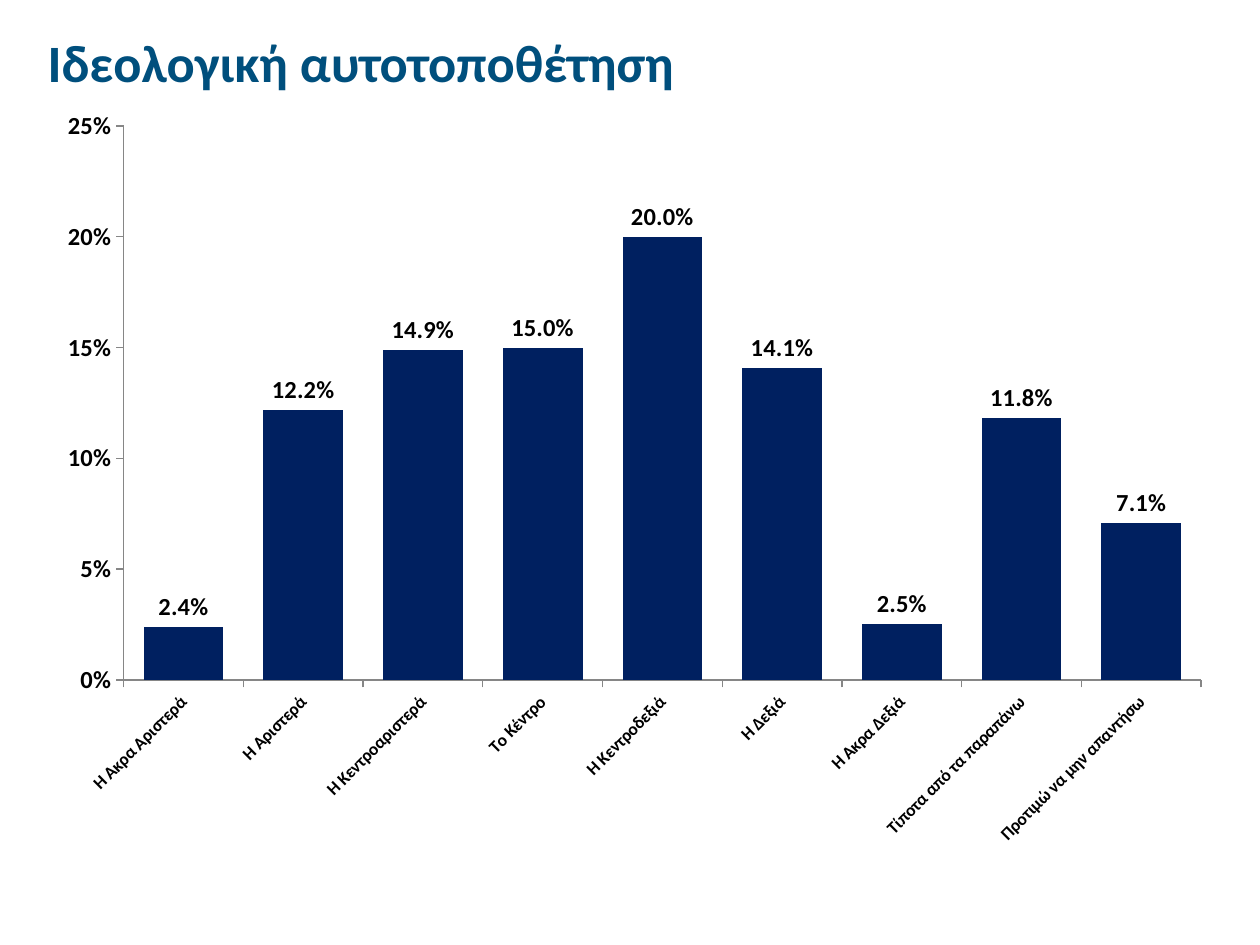
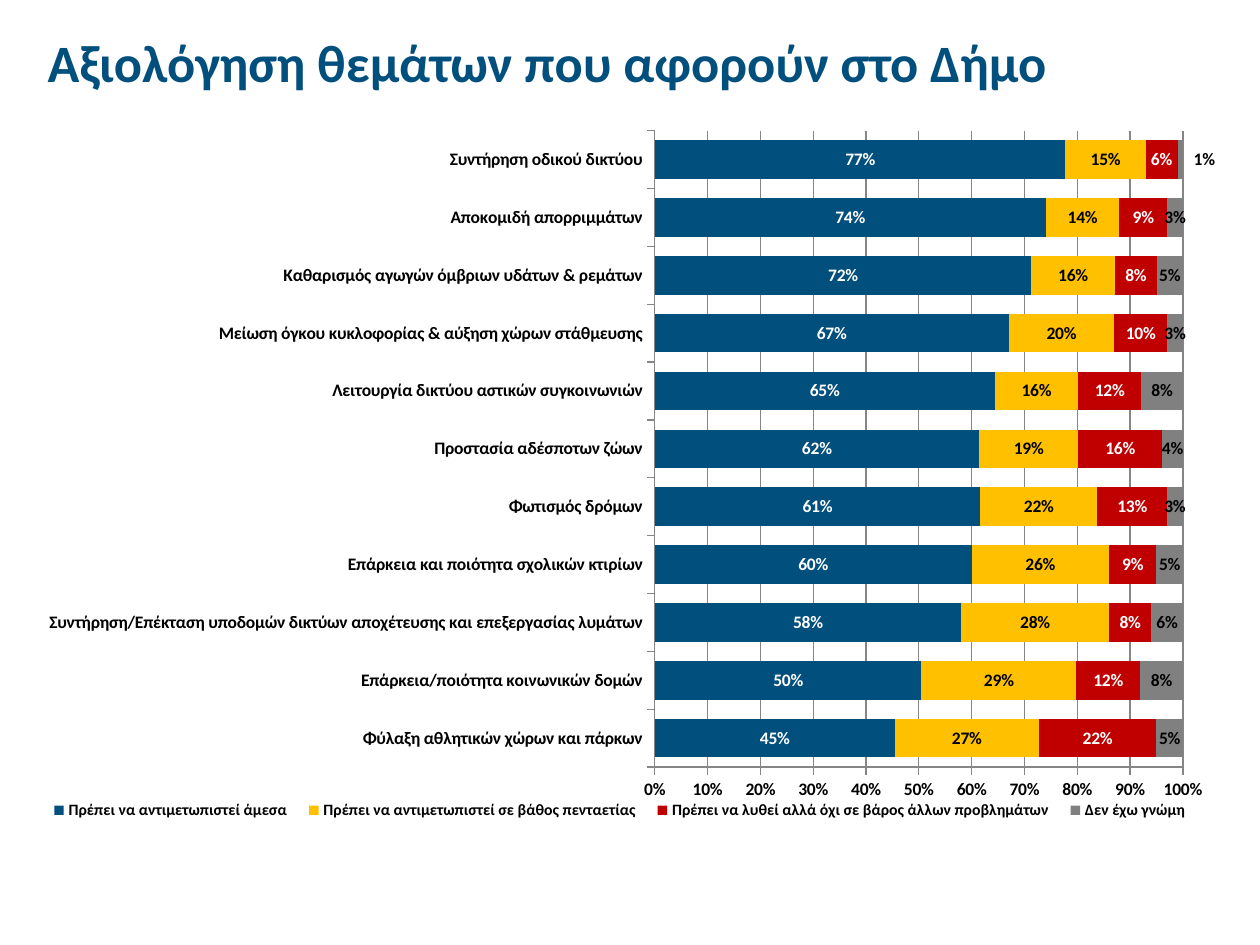
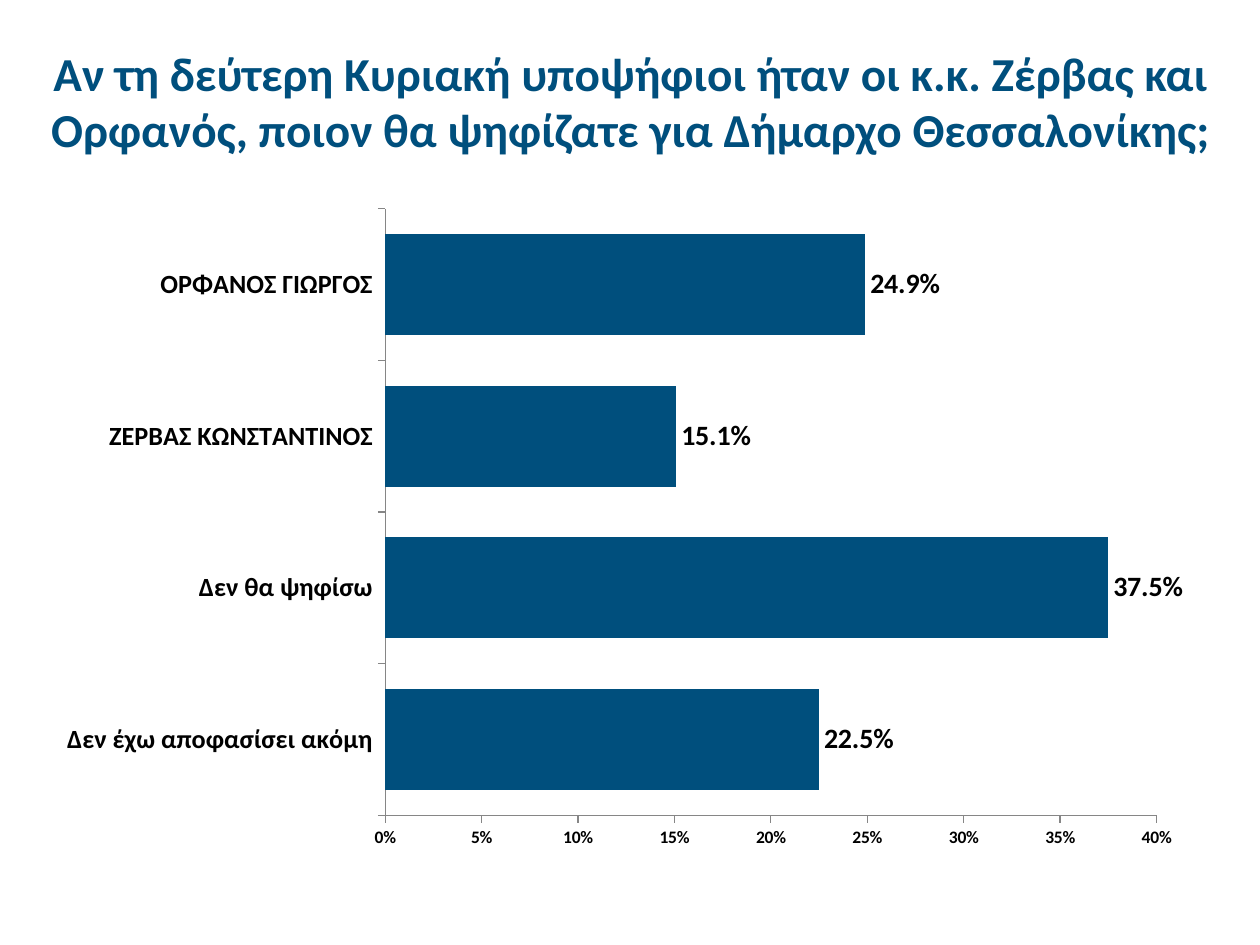
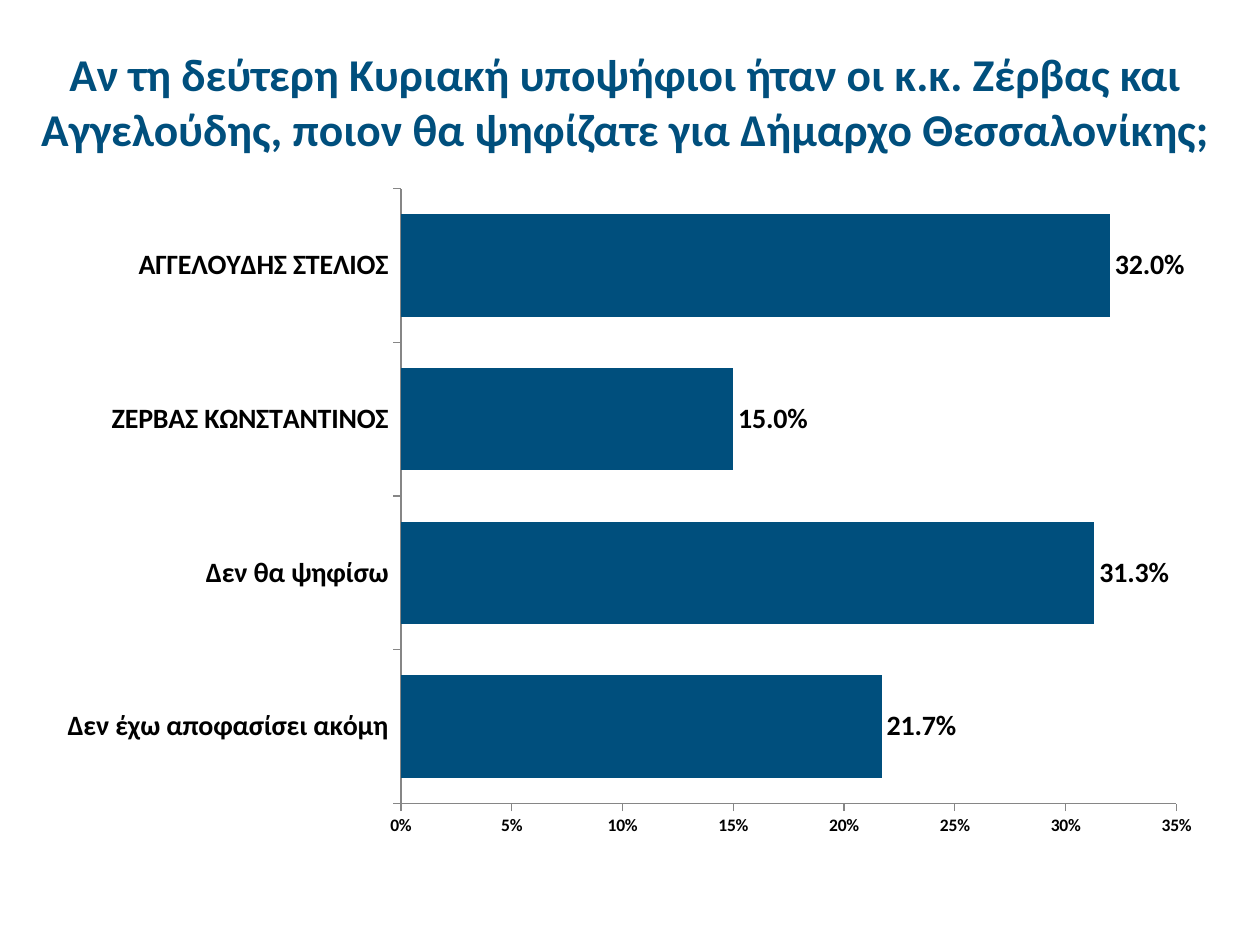
"""Builds four slides of municipal survey results, each a title over a chart."""
from dataclasses import dataclass

import lxml.etree
import pptx
import pptx.chart.data
import pptx.dml.color
import pptx.enum.chart
import pptx.enum.text
import pptx.oxml.ns
import pptx.util

Cm = pptx.util.Cm
Pt = pptx.util.Pt
ChartType = pptx.enum.chart.XL_CHART_TYPE
LabelPosition = pptx.enum.chart.XL_LABEL_POSITION
Align = pptx.enum.text.PP_ALIGN
qn = pptx.oxml.ns.qn


def rgb(code):
    """Return the colour for a hexadecimal code."""
    return pptx.dml.color.RGBColor.from_string(code)


@dataclass(frozen=True)
class Theme:
    """Colours and type sizes shared by the slides."""
    font = "Calibri"
    blue = rgb("004F7D")
    navy = rgb("002060")
    yellow = rgb("FFC000")
    red = rgb("C00000")
    grey = rgb("808080")
    axis = rgb("868686")
    black = rgb("000000")
    white = rgb("FFFFFF")
    title = 30
    question = 27
    long_question = 26
    legend = 9
    small = 10
    column_axis = 14
    candidate = 15
    large = 16


THEME = Theme()

IDEOLOGY = {
    "Η Άκρα Αριστερά": 0.024,
    "Η Αριστερά": 0.122,
    "Η Κεντροαριστερά": 0.149,
    "Το Κέντρο": 0.15,
    "Η Κεντροδεξιά": 0.2,
    "Η Δεξιά": 0.141,
    "Η Άκρα Δεξιά": 0.025,
    "Τίποτα από τα παραπάνω": 0.118,
    "Προτιμώ να μην απαντήσω": 0.071,
}

ISSUES = {
    "Φύλαξη αθλητικών χώρων και πάρκων": (0.45, 0.27, 0.22, 0.05),
    "Επάρκεια/ποιότητα κοινωνικών δομών": (0.5, 0.29, 0.12, 0.08),
    "Συντήρηση/Επέκταση υποδομών δικτύων αποχέτευσης και επεξεργασίας λυμάτων":
        (0.58, 0.28, 0.08, 0.06),
    "Επάρκεια και ποιότητα σχολικών κτιρίων": (0.6, 0.26, 0.09, 0.05),
    "Φωτισμός δρόμων": (0.61, 0.22, 0.13, 0.03),
    "Προστασία αδέσποτων ζώων": (0.62, 0.19, 0.16, 0.04),
    "Λειτουργία δικτύου αστικών συγκοινωνιών": (0.65, 0.16, 0.12, 0.08),
    "Μείωση όγκου κυκλοφορίας & αύξηση χώρων στάθμευσης": (0.67, 0.2, 0.1, 0.03),
    "Καθαρισμός αγωγών όμβριων υδάτων & ρεμάτων": (0.72, 0.16, 0.08, 0.05),
    "Αποκομιδή απορριμμάτων": (0.74, 0.14, 0.09, 0.03),
    "Συντήρηση οδικού δικτύου": (0.77, 0.15, 0.06, 0.01),
}

ANSWERS = (
    ("Πρέπει να αντιμετωπιστεί άμεσα", THEME.blue, THEME.white),
    ("Πρέπει να αντιμετωπιστεί σε βάθος πενταετίας", THEME.yellow, THEME.black),
    ("Πρέπει να λυθεί αλλά όχι σε βάρος άλλων προβλημάτων", THEME.red, THEME.white),
    ("Δεν έχω γνώμη", THEME.grey, THEME.black),
)

RUNOFF_ORFANOS = {
    "Δεν έχω αποφασίσει ακόμη": 0.225,
    "Δεν θα ψηφίσω": 0.375,
    "ΖΕΡΒΑΣ ΚΩΝΣΤΑΝΤΙΝΟΣ": 0.151,
    "ΟΡΦΑΝΟΣ ΓΙΩΡΓΟΣ": 0.249,
}

RUNOFF_ANGELOUDIS = {
    "Δεν έχω αποφασίσει ακόμη": 0.217,
    "Δεν θα ψηφίσω": 0.313,
    "ΖΕΡΒΑΣ ΚΩΝΣΤΑΝΤΙΝΟΣ": 0.15,
    "ΑΓΓΕΛΟΥΔΗΣ ΣΤΕΛΙΟΣ": 0.32,
}


def set_font(font, size, color=THEME.black):
    """Apply the shared bold typeface."""
    font.name = THEME.font
    font.size = Pt(size)
    font.bold = True
    font.color.rgb = color


def add_title_slide(presentation, text, box, size=THEME.title, align=Align.LEFT):
    """Add a blank slide with a title and return the slide."""
    slide = presentation.slides.add_slide(presentation.slide_layouts[6])
    frame = slide.shapes.add_textbox(*map(Cm, box)).text_frame
    frame.word_wrap = True
    frame.vertical_anchor = pptx.enum.text.MSO_ANCHOR.MIDDLE
    paragraph = frame.paragraphs[0]
    paragraph.text = text
    paragraph.alignment = align
    set_font(paragraph.font, size, THEME.blue)
    return slide


def set_layout(parent, index, **settings):
    """Give a chart part a manual layout."""
    for layout in parent.findall(qn("c:layout")):
        parent.remove(layout)
    layout = lxml.etree.Element(qn("c:layout"))
    manual = lxml.etree.SubElement(layout, qn("c:manualLayout"))
    for name, value in settings.items():
        lxml.etree.SubElement(manual, qn(f"c:{name}")).set("val", str(value))
    parent.insert(index, layout)


def set_area(chart, part, index, area, **target):
    """Place a chart part at fractions of the chart space."""
    element = chart.element.find(".//" + qn(part))
    set_layout(element, index, **target, xMode="edge", yMode="edge", **dict(zip("xywh", area)))


def style_axis(axis, size):
    """Style the line and labels of an axis."""
    axis.format.line.color.rgb = THEME.axis
    axis.format.line.width = Pt(0.75)
    axis.has_major_gridlines = False
    set_font(axis.tick_labels.font, size)


def style_series(series, color, label_size, label_color, label_format, position):
    """Fill a series and show its values."""
    series.format.fill.solid()
    series.format.fill.fore_color.rgb = color
    labels = series.data_labels
    labels.show_value = True
    labels.number_format = label_format
    labels.number_format_is_linked = False
    labels.position = position
    set_font(labels.font, label_size, label_color)


def add_percent_chart(slide, kind, box, categories, rows, maximum, step,
                      category_size=THEME.small, value_size=THEME.small):
    """Add a chart with percentage axis and return it."""
    data = pptx.chart.data.CategoryChartData(number_format="0.0%")
    data.categories = categories
    for name, values in rows:
        data.add_series(name, values)
    chart = slide.shapes.add_chart(kind, *map(Cm, box), data).chart
    chart.has_title = False
    chart.has_legend = False
    set_font(chart.font, THEME.small)
    plot = chart.plots[0]
    plot.gap_width = 50
    plot.vary_by_categories = False
    style_axis(chart.category_axis, category_size)
    axis = chart.value_axis
    style_axis(axis, value_size)
    axis.minimum_scale = 0
    axis.maximum_scale = maximum
    axis.major_unit = step
    axis.tick_labels.number_format = "0%"
    axis.tick_labels.number_format_is_linked = False
    return chart


def add_single_chart(slide, kind, box, results, maximum, color, label_size, **sizes):
    """Add a one-series chart with labels past the bar ends."""
    chart = add_percent_chart(slide, kind, box, list(results),
                              [("Series 1", list(results.values()))], maximum, 0.05, **sizes)
    style_series(chart.plots[0].series[0], color, label_size, THEME.black, "0.0%",
                 LabelPosition.OUTSIDE_END)
    return chart


def tilt_category_labels(chart, degrees):
    """Rotate the category labels."""
    steps = map(qn, ("c:catAx", "c:txPr", "a:bodyPr"))
    body = chart.element.find(".//" + "/".join(steps))
    body.set("rot", str(degrees * 60000))
    body.set("vert", "horz")


def add_legend(chart, area):
    """Add a legend below the plot."""
    chart.has_legend = True
    legend = chart.legend
    legend.position = pptx.enum.chart.XL_LEGEND_POSITION.BOTTOM
    legend.include_in_layout = False
    set_font(legend.font, THEME.legend)
    set_area(chart, "c:legend", 1, area)


def shift_label(series, index, offset):
    """Move one value label sideways."""
    label = series.points[index].data_label
    label.position = LabelPosition.CENTER
    set_font(label.font, THEME.small)
    element = series.data_labels._element.find(qn("c:dLbl"))
    set_layout(element, 1, x=offset, y=0)
    number_format = lxml.etree.Element(qn("c:numFmt"), formatCode="0%", sourceLinked="0")
    element.insert(2, number_format)


def add_issue_chart(slide, box):
    """Add the stacked chart of municipal issues."""
    columns = zip(*ISSUES.values())
    rows = [(answer[0], values) for answer, values in zip(ANSWERS, columns)]
    chart = add_percent_chart(slide, ChartType.BAR_STACKED_100, box, list(ISSUES), rows, 1, 0.1)
    chart.plots[0].overlap = 100
    chart.value_axis.has_major_gridlines = True
    chart.value_axis.major_gridlines.format.line.color.rgb = THEME.axis
    for series, (_, color, label_color) in zip(chart.plots[0].series, ANSWERS):
        style_series(series, color, THEME.small, label_color, "0%", LabelPosition.CENTER)
    shift_label(chart.plots[0].series[len(ANSWERS) - 1], len(ISSUES) - 1, 0.02)
    set_area(chart, "c:plotArea", 0, (0.02, 0.02, 0.96, 0.91), layoutTarget="outer")
    add_legend(chart, (0.01, 0.92, 0.97, 0.05))


def main():
    """Build and save the presentation."""
    presentation = pptx.Presentation()
    presentation.slide_width = Cm(25.4)
    presentation.slide_height = Cm(19.05)
    heading_box = (0.71, 0.53, 23.34, 1.42)

    slide = add_title_slide(presentation, "Ιδεολογική αυτοτοποθέτηση", heading_box)
    chart = add_single_chart(slide, ChartType.COLUMN_CLUSTERED, (0.89, 1.93, 23.8, 15.39),
                             IDEOLOGY, 0.25, THEME.navy, THEME.column_axis,
                             value_size=THEME.column_axis)
    tilt_category_labels(chart, -45)

    slide = add_title_slide(presentation, "Αξιολόγηση θεμάτων που αφορούν στο Δήμο", heading_box)
    add_issue_chart(slide, (0.51, 2.34, 24.21, 14.81))

    runoffs = (
        ("Ορφανός", (0.71, 0.53, 24, 3), THEME.question, (0.89, 3.94, 23.19, 13.41),
         RUNOFF_ORFANOS, 0.4, THEME.candidate),
        ("Αγγελούδης", (0.51, 0.53, 24.21, 3), THEME.long_question, (0.89, 3.53, 23.6, 13.59),
         RUNOFF_ANGELOUDIS, 0.35, THEME.large),
    )
    for rival, title_box, title_size, box, results, maximum, category_size in runoffs:
        question = ("Αν τη δεύτερη Κυριακή υποψήφιοι ήταν οι κ.κ. Ζέρβας και "
                    f"{rival}, ποιον θα ψηφίζατε για Δήμαρχο Θεσσαλονίκης;")
        slide = add_title_slide(presentation, question, title_box, title_size, Align.CENTER)
        add_single_chart(slide, ChartType.BAR_CLUSTERED, box, results, maximum,
                         THEME.blue, THEME.large, category_size=category_size)

    presentation.save("out.pptx")


if __name__ == "__main__":
    main()
